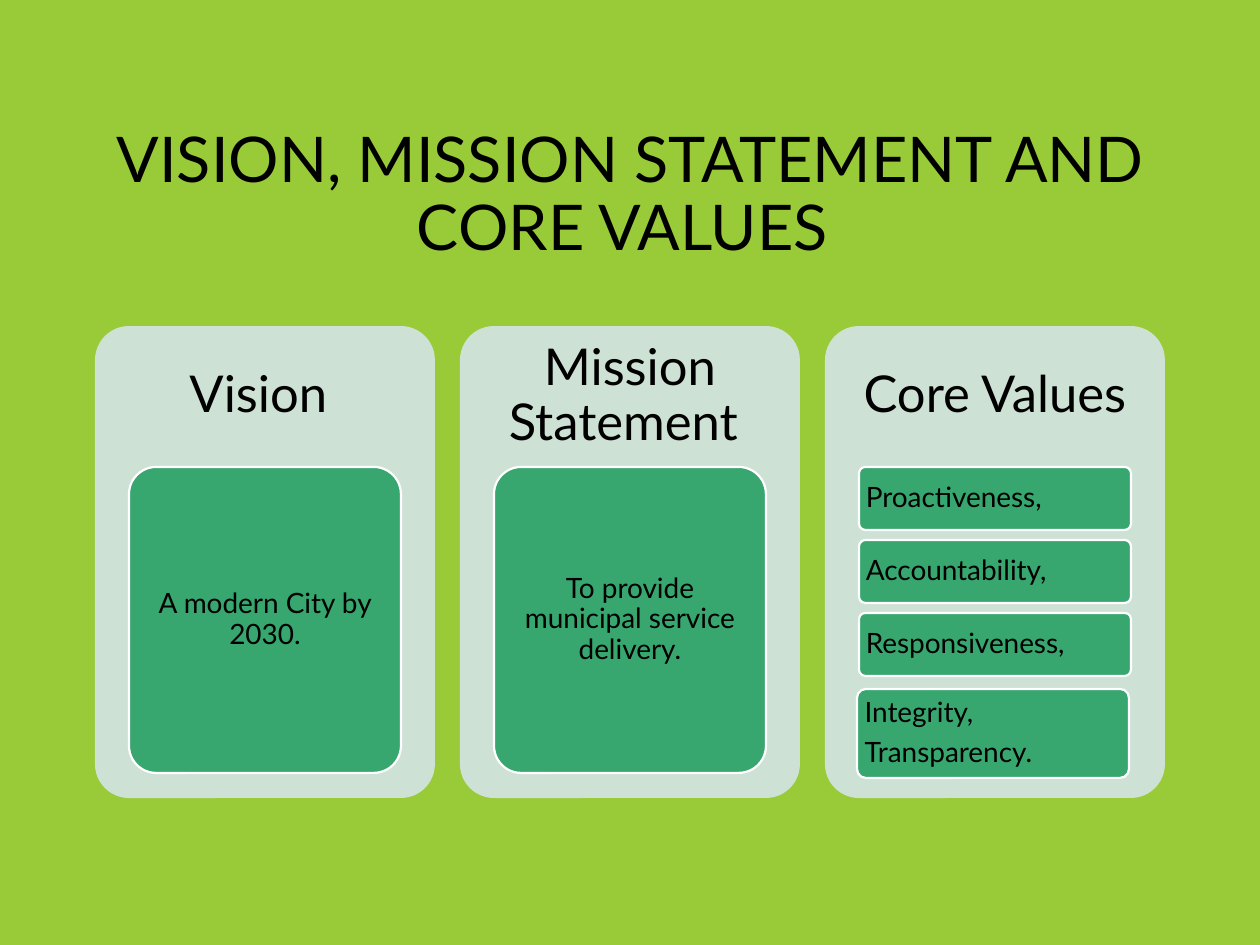
from pptx import Presentation
from pptx import util as u
from pptx.dml import color
from pptx.enum import shapes, text

SCALE = 914400 // 126
FONT = "Lato"
BACKGROUND, CARD, TILE, BLACK, WHITE = "99CB38", "CEE1D5", "37A76F", "000000", "FFFFFF"
CENTER, JUSTIFY = text.PP_ALIGN.CENTER, text.PP_ALIGN.JUSTIFY
CARD_LEFT, CARD_TOP, CARD_WIDTH, CARD_HEIGHT, CARD_STEP = 95, 326, 340, 472, 365
HEADING_HEIGHT = 141
TILE_INDENT, TILE_TOP, TILE_WIDTH, TILE_HEIGHT = 34, 467, 272, 306
VALUE_HEIGHT, VALUE_STEP = 63, 73


def px(length):
    return u.Emu(length * SCALE)


def paint(fill, hex_color):
    fill.solid()
    fill.fore_color.rgb = color.RGBColor.from_string(hex_color)


def write(shape, content, size, align, insets, space_after=0):
    frame = shape.text_frame
    frame.text = content
    frame.word_wrap = True
    frame.vertical_anchor = text.MSO_ANCHOR.MIDDLE
    frame.margin_left = frame.margin_right = px(insets[0])
    frame.margin_top = frame.margin_bottom = px(insets[1])
    for paragraph in frame.paragraphs:
        paragraph.alignment = align
        paragraph.line_spacing = 0.9
        paragraph.space_before = u.Pt(0)
        paragraph.space_after = u.Pt(space_after)
        for run in paragraph.runs:
            run.font.name = FONT
            run.font.size = u.Pt(size)
            run.font.color.rgb = color.RGBColor.from_string(BLACK)


def add_title(slide, content):
    title = slide.shapes.title
    title.left, title.top, title.width, title.height = map(px, (95, 86, 1071, 220))
    write(title, content, 36, CENTER, (13, 6))


def add_rounded(slide, box, fill, outline=None):
    shape = slide.shapes.add_shape(shapes.MSO_SHAPE.ROUNDED_RECTANGLE, *map(px, box))
    shape.adjustments[0] = 0.1
    shape.shadow.inherit = False
    paint(shape.fill, fill)
    if outline:
        paint(shape.line.fill, outline)
        shape.line.width = u.Pt(1.25)
    else:
        shape.line.fill.background()
    return shape


def add_card(slide, left, heading):
    add_rounded(slide, (left, CARD_TOP, CARD_WIDTH, CARD_HEIGHT), CARD)
    box = slide.shapes.add_textbox(*map(px, (left, CARD_TOP, CARD_WIDTH, HEADING_HEIGHT)))
    write(box, heading, 29, CENTER, (15, 15), 10)


def add_tile(slide, left, top, height, content, align):
    tile = add_rounded(slide, (left, top, TILE_WIDTH, height), TILE, WHITE)
    write(tile, content, 16, align, (5, 4), 5.6)


def main():
    presentation = Presentation()
    presentation.slide_width, presentation.slide_height = px(1260), px(945)
    slide = presentation.slides.add_slide(presentation.slide_layouts[5])
    paint(slide.background.fill, BACKGROUND)
    add_title(slide, "VISION, MISSION STATEMENT AND CORE VALUES ")

    lefts = [CARD_LEFT + CARD_STEP * column for column in range(3)]
    statements = [
        ("Vision ", "A modern City by 2030."),
        ("Mission Statement ", "To provide municipal service delivery."),
    ]
    for left, (heading, statement) in zip(lefts, statements):
        add_card(slide, left, heading)
        add_tile(slide, left + TILE_INDENT, TILE_TOP, TILE_HEIGHT, statement, CENTER)

    add_card(slide, lefts[2], "Core Values")
    value_left = lefts[2] + TILE_INDENT
    for row, value in enumerate(["Proactiveness,", "Accountability,", "Responsiveness,"]):
        add_tile(slide, value_left, TILE_TOP + VALUE_STEP * row, VALUE_HEIGHT, value, JUSTIFY)
    add_tile(slide, value_left - 2, 689, 89, "Integrity,\nTransparency.", JUSTIFY)

    presentation.save("out.pptx")


if __name__ == "__main__":
    main()
